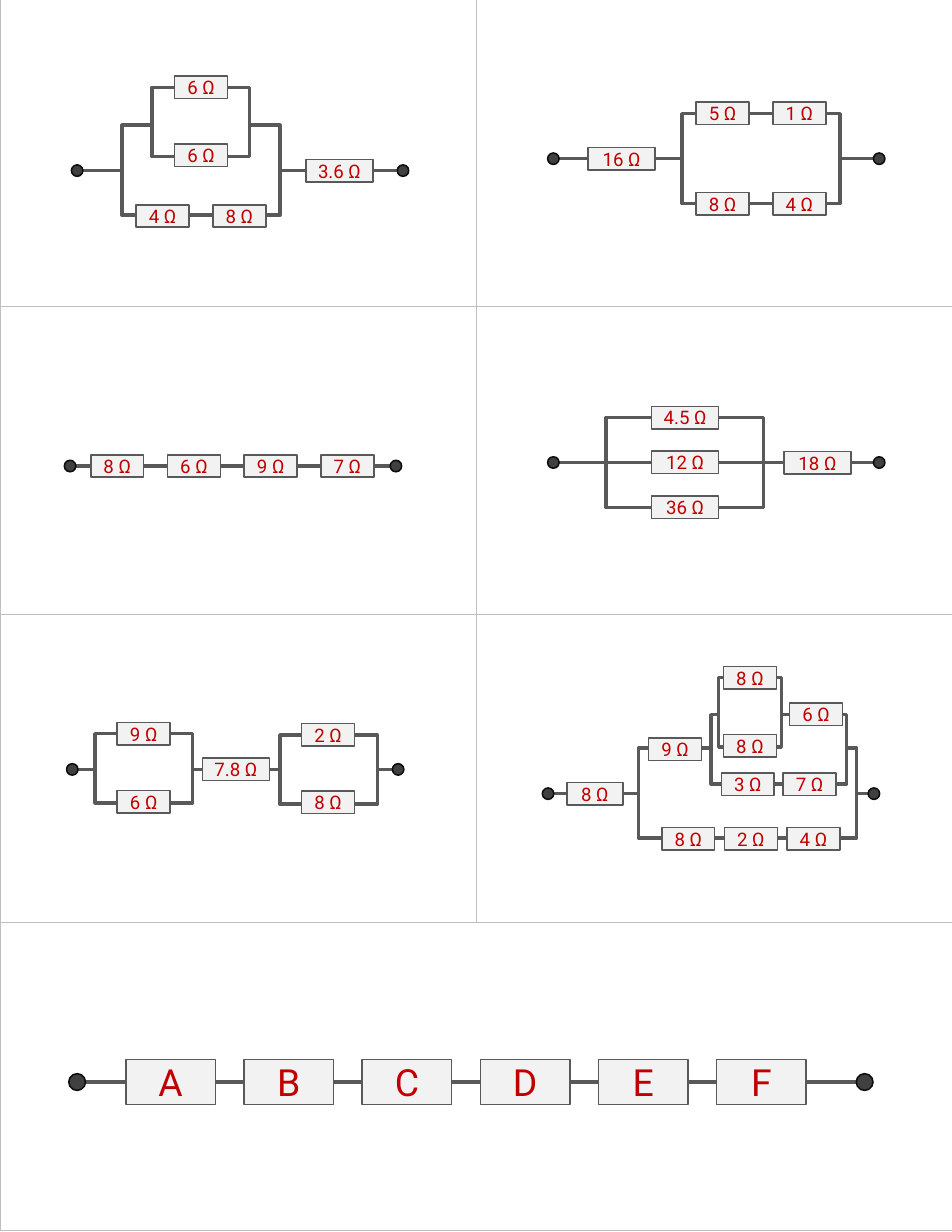
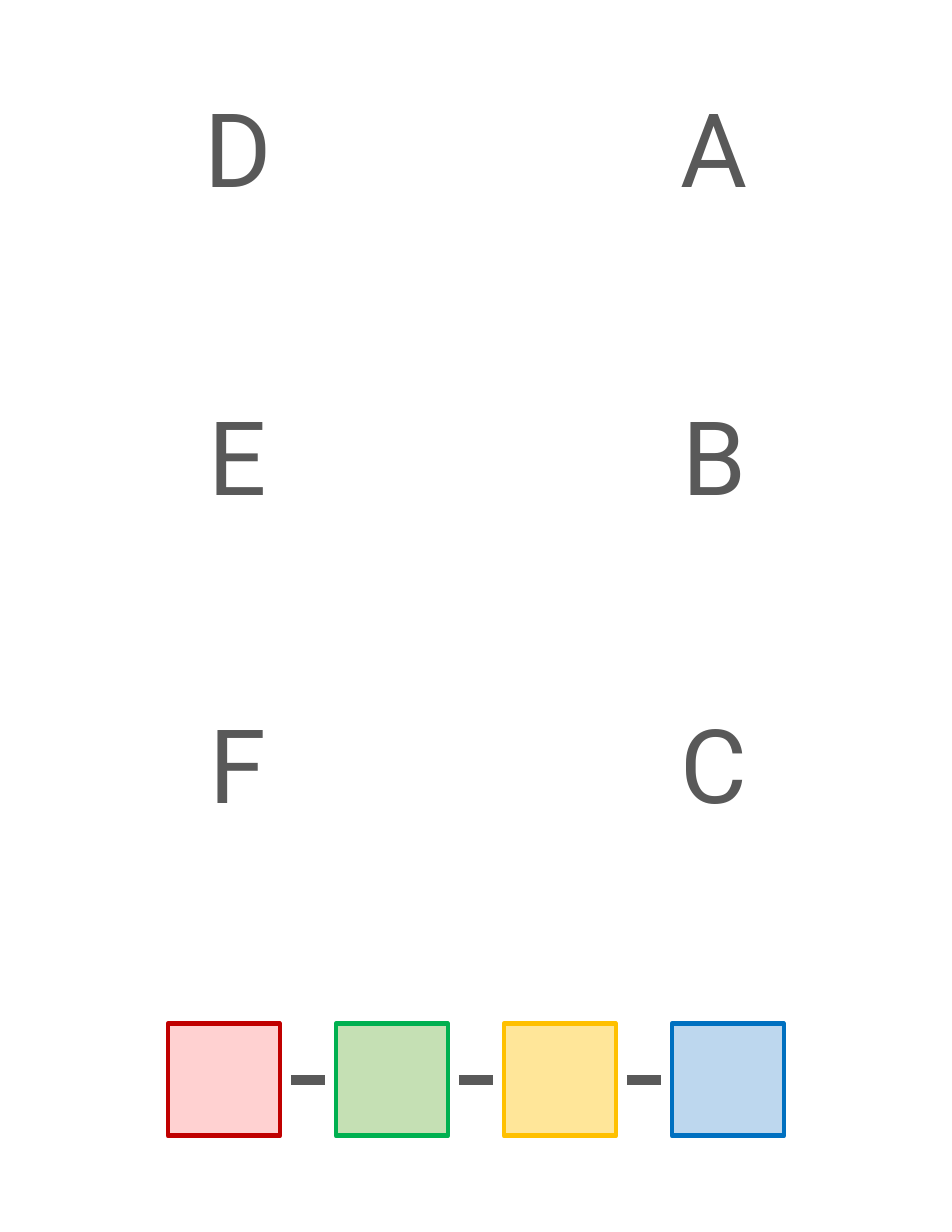
from dataclasses import dataclass

from lxml.etree import SubElement
from pptx import Presentation
from pptx.dml.color import RGBColor
from pptx.enum.shapes import MSO_CONNECTOR, MSO_SHAPE
from pptx.enum.text import MSO_ANCHOR, PP_ALIGN
from pptx.oxml import parse_xml
from pptx.oxml.ns import nsdecls, qn
from pptx.shapes.autoshape import Shape
from pptx.slide import Slide
from pptx.table import Table, _Cell
from pptx.text.text import TextFrame
from pptx.util import Cm, Pt

PAGE_WIDTH, PAGE_HEIGHT = 21.59, 27.94
COLUMNS, ROWS = 2, 4
FONT = "Roboto"
COLORS = {
    "wire": "595959",
    "resistor": "F2F2F2",
    "value": "C00000",
    "terminal": "404040",
    "terminal_edge": "0D0D0D",
    "loop": "FFFFFF",
    "grid": "BFBFBF",
}


@dataclass(frozen=True)
class Loop:
    left: float
    top: float
    width: float = 2.21
    height: float = 1.57
    filled: bool = True


@dataclass(frozen=True)
class Resistors:
    labels: tuple[str, ...]
    x: float
    y: float
    dx: float = 0
    dy: float = 0
    width: float = 1.2
    height: float = 0.51
    size: int = 12


@dataclass(frozen=True)
class Circuit:
    x: float
    y: float
    loops: tuple[Loop, ...]
    resistors: tuple[Resistors, ...]
    length: float = 7.39
    weight: float = 2.25
    terminal: float = 0.26


@dataclass(frozen=True)
class Swatch:
    fill: str
    edge: str


SERIES = 1.74
PARALLEL = 1.54
WIDE = 1.52

CIRCUITS = (
    Circuit(1.75, 3.87, (Loop(2.77, 2.84, 3.58, 2.04), Loop(3.45, 1.98)), (
        Resistors(("6 Ω", "6 Ω"), 4.56, 1.98, dy=PARALLEL),
        Resistors(("4 Ω", "8 Ω"), 3.69, 4.9, dx=SERIES),
        Resistors(("3.6 Ω",), 7.7, 3.87, width=WIDE),
    )),
    Circuit(12.55, 3.6, (Loop(15.47, 2.58, 3.58, 2.04),), (
        Resistors(("16 Ω",), 14.1, 3.6, width=WIDE),
        Resistors(("5 Ω", "1 Ω"), 16.39, 2.57, dx=SERIES),
        Resistors(("8 Ω", "4 Ω"), 16.39, 4.62, dx=SERIES),
    )),
    Circuit(1.59, 10.57, (), (
        Resistors(("8 Ω", "6 Ω", "9 Ω", "7 Ω"), 2.66, 10.57, dx=SERIES),
    )),
    Circuit(12.55, 10.49, (Loop(13.74, 9.47, 3.58, 2.04, False),), (
        Resistors(("4.5 Ω", "12 Ω", "36 Ω"), 15.54, 9.47, dy=1.02, width=WIDE),
        Resistors(("18 Ω",), 18.54, 10.5, width=WIDE),
    )),
    Circuit(1.64, 17.45, (Loop(2.16, 16.64), Loop(6.35, 16.67)), (
        Resistors(("9 Ω", "6 Ω"), 3.26, 16.64, dy=PARALLEL),
        Resistors(("7.8 Ω",), 5.35, 17.45, width=WIDE),
        Resistors(("2 Ω", "8 Ω"), 7.44, 16.66, dy=PARALLEL),
    )),
    Circuit(12.43, 18, (
        Loop(14.48, 16.97, 4.95, 2.04),
        Loop(16.13, 16.21, 3.07),
        Loop(16.3, 15.37, 1.42),
    ), (
        Resistors(("8 Ω",), 13.49, 18, width=1.27),
        Resistors(("9 Ω",), 15.31, 16.99),
        Resistors(("8 Ω", "8 Ω"), 17.01, 15.37, dy=PARALLEL),
        Resistors(("6 Ω",), 18.51, 16.2),
        Resistors(("3 Ω", "7 Ω"), 16.96, 17.79, dx=1.4),
        Resistors(("8 Ω", "2 Ω", "4 Ω"), 15.61, 19.02, dx=1.42),
    )),
    Circuit(1.75, 24.54, (), (
        Resistors(tuple("ABCDEF"), 3.87, 24.54, dx=2.68, width=2.03, height=1.02, size=24),
    ), length=17.86, weight=3, terminal=0.38),
)

ANSWERS = (("D", "A"), ("E", "B"), ("F", "C"))

SWATCHES = (
    Swatch("FFD1D1", "C00000"),
    Swatch("C5E0B4", "00B050"),
    Swatch("FFE699", "FFC000"),
    Swatch("BDD7EE", "0070C0"),
)


def rgb(name: str) -> RGBColor:
    return RGBColor.from_string(COLORS.get(name, name))


def add_outlined(slide: Slide, kind: MSO_SHAPE, left: float, top: float, width: float,
                 height: float, fill: str | None, edge: str, weight: float) -> Shape:
    shape = slide.shapes.add_shape(kind, Cm(left), Cm(top), Cm(width), Cm(height))
    shape.shadow.inherit = False
    if fill:
        shape.fill.solid()
        shape.fill.fore_color.rgb = rgb(fill)
    else:
        shape.fill.background()
    shape.line.color.rgb = rgb(edge)
    shape.line.width = Pt(weight)
    return shape


def add_wire(slide: Slide, x: float, y: float, length: float, weight: float) -> None:
    wire = slide.shapes.add_connector(
        MSO_CONNECTOR.STRAIGHT, Cm(x), Cm(y), Cm(x + length), Cm(y))
    wire.line.color.rgb = rgb("wire")
    wire.line.width = Pt(weight)
    SubElement(wire._element.spPr, qn("a:effectLst"))


def write_centred(frame: TextFrame, text: str, size: int, color: str) -> None:
    paragraph = frame.paragraphs[0]
    paragraph.alignment = PP_ALIGN.CENTER
    run = paragraph.add_run()
    run.text = text
    run.font.name = FONT
    run.font.size = Pt(size)
    run.font.color.rgb = rgb(color)


def draw_resistors(slide: Slide, group: Resistors) -> None:
    for i, label in enumerate(group.labels):
        left = group.x + i * group.dx - group.width / 2
        top = group.y + i * group.dy - group.height / 2
        resistor = add_outlined(slide, MSO_SHAPE.RECTANGLE, left, top, group.width,
                                group.height, "resistor", "wire", 1)
        frame = resistor.text_frame
        frame.margin_left = frame.margin_right = frame.margin_top = frame.margin_bottom = 0
        frame.vertical_anchor = MSO_ANCHOR.MIDDLE
        write_centred(frame, label, group.size, "value")


def draw_circuit(slide: Slide, circuit: Circuit) -> None:
    add_wire(slide, circuit.x, circuit.y, circuit.length, circuit.weight)
    for loop in circuit.loops:
        add_outlined(slide, MSO_SHAPE.RECTANGLE, loop.left, loop.top, loop.width,
                     loop.height, "loop" if loop.filled else None, "wire", 2.25)
    for group in circuit.resistors:
        draw_resistors(slide, group)
    radius = circuit.terminal / 2
    for x in (circuit.x, circuit.x + circuit.length):
        add_outlined(slide, MSO_SHAPE.OVAL, x - radius, circuit.y - radius,
                     circuit.terminal, circuit.terminal, "terminal", "terminal_edge", 1)


def border_cell(cell: _Cell) -> None:
    properties = cell._tc.get_or_add_tcPr()
    for i, side in enumerate("LRTB"):
        properties.insert(i, parse_xml(
            f'<a:ln{side} {nsdecls("a")} w="{Pt(0.5)}"><a:solidFill>'
            f'<a:srgbClr val="{COLORS["grid"]}"/></a:solidFill></a:ln{side}>'))


def add_card_grid(slide: Slide) -> Table:
    grid = slide.shapes.add_table(
        ROWS, COLUMNS, 0, Cm(-0.03), Cm(PAGE_WIDTH), Cm(PAGE_HEIGHT)).table
    grid.first_row = grid.horz_banding = False
    for column in grid.columns:
        column.width = Cm(PAGE_WIDTH / COLUMNS)
    for row in grid.rows:
        row.height = Cm(PAGE_HEIGHT / ROWS)
    grid.cell(ROWS - 1, 0).merge(grid.cell(ROWS - 1, COLUMNS - 1))
    for cell in grid.iter_cells():
        cell.fill.background()
        cell.vertical_anchor = MSO_ANCHOR.MIDDLE
    return grid


def build_circuits(slide: Slide) -> None:
    for cell in add_card_grid(slide).iter_cells():
        if not cell.is_spanned:
            border_cell(cell)
    for circuit in CIRCUITS:
        draw_circuit(slide, circuit)


def build_answers(slide: Slide) -> None:
    grid = add_card_grid(slide)
    for row, letters in enumerate(ANSWERS):
        for column, letter in enumerate(letters):
            write_centred(grid.cell(row, column).text_frame, letter, 66, "wire")
    side, pitch, left, top = 2.54, 3.81, 3.81, 23.22
    dash = 0.78
    for i, swatch in enumerate(SWATCHES):
        x = left + i * pitch
        add_outlined(slide, MSO_SHAPE.RECTANGLE, x, top, side, side,
                     swatch.fill, swatch.edge, 3)
        if i:
            add_wire(slide, x - (pitch - side + dash) / 2, top + side / 2, dash, 6)


def main() -> None:
    deck = Presentation()
    deck.slide_width, deck.slide_height = Cm(PAGE_WIDTH), Cm(PAGE_HEIGHT)
    blank = deck.slide_layouts[6]
    for build in (build_circuits, build_answers):
        build(deck.slides.add_slide(blank))
    deck.save("out.pptx")


if __name__ == "__main__":
    main()
